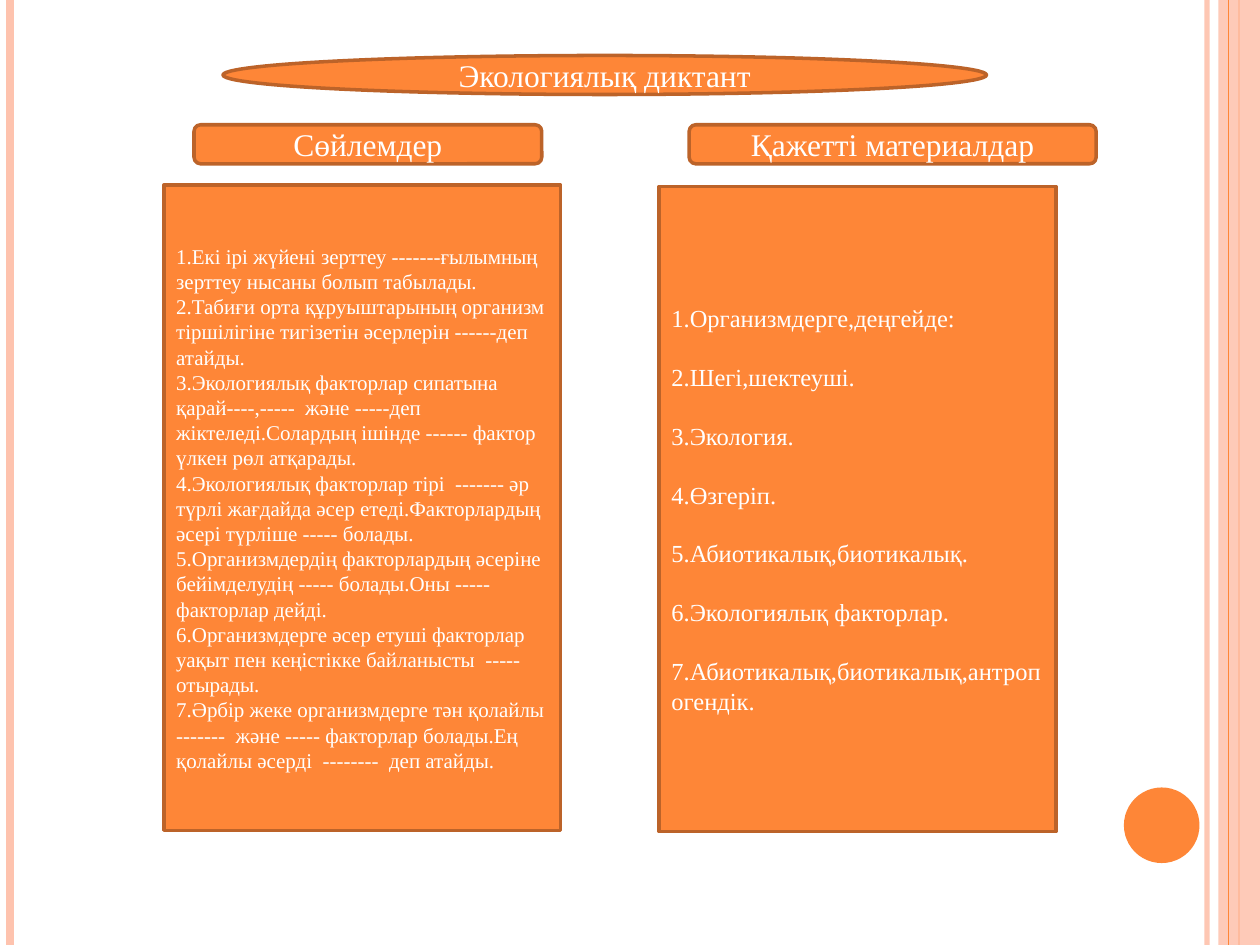
from dataclasses import dataclass

from lxml import etree
from pptx import Presentation
from pptx.dml.color import RGBColor
from pptx.enum.shapes import MSO_CONNECTOR, MSO_SHAPE
from pptx.enum.text import MSO_ANCHOR, PP_ALIGN
from pptx.oxml.ns import qn
from pptx.util import Inches, Pt

STRAIGHT = MSO_CONNECTOR.STRAIGHT
RECTANGLE, ROUNDED, ELLIPSE = MSO_SHAPE.RECTANGLE, MSO_SHAPE.ROUNDED_RECTANGLE, MSO_SHAPE.OVAL
LEFT, CENTER = PP_ALIGN.LEFT, PP_ALIGN.CENTER
MIDDLE = MSO_ANCHOR.MIDDLE
TOP_SITE, BOTTOM_SITE = 0, 2

CELL = Inches(0.1)
COLUMNS, ROWS = 100, 75


@dataclass(frozen=True)
class Theme:
    """Colours, font and sizes of the slide."""
    orange: str = "FE8637"
    peach: str = "FEC3AE"
    border: str = "BC6329"
    text: str = "FFFFFF"
    font: str = "Times New Roman"
    heading_size: float = 18
    sentence_size: float = 12
    material_size: float = 14
    material_gap: float = 16.8
    border_width: float = 2


THEME = Theme()

SENTENCES = [
    "1.Екі ірі жүйені зерттеу -------ғылымның зерттеу нысаны болып табылады.",
    "2.Табиғи орта құруыштарының организм тіршілігіне тигізетін әсерлерін ------деп атайды.",
    "3.Экологиялық факторлар сипатына қарай----,-----  және -----деп жіктеледі."
    "Солардың ішінде ------ фактор үлкен рөл атқарады.",
    "4.Экологиялық факторлар тірі  ------- әр түрлі жағдайда әсер етеді."
    "Факторлардың әсері түрліше ----- болады.",
    "5.Организмдердің факторлардың әсеріне бейімделудің ----- болады.Оны -----факторлар дейді.",
    "6.Организмдерге әсер етуші факторлар уақыт пен кеңістікке байланысты  -----отырады.",
    "7.Әрбір жеке организмдерге тән қолайлы -------  және ----- факторлар болады."
    "Ең қолайлы әсерді  --------  деп атайды.",
]
MATERIALS = [
    "1.Организмдерге,деңгейде:",
    "2.Шегі,шектеуші.",
    "3.Экология.",
    "4.Өзгеріп.",
    "5.Абиотикалық,биотикалық.",
    "6.Экологиялық факторлар.",
    "7.Абиотикалық,биотикалық,антропогендік.",
]


def cells(count):
    """Convert a number of grid cells to a length."""
    return round(count * CELL)


def set_opacity(properties, percent):
    """Make the solid colour inside a properties element partly transparent."""
    colour = next(properties.iter(qn("a:srgbClr")))
    etree.SubElement(colour, qn("a:alpha")).set("val", str(percent * 1000))


def add_shape(slide, kind, column, row, columns, rows, fill=THEME.orange, border=None):
    """Add a filled preset shape placed on the grid."""
    shape = slide.shapes.add_shape(kind, *map(cells, (column, row, columns, rows)))
    shape.shadow.inherit = False
    shape.fill.solid()
    shape.fill.fore_color.rgb = RGBColor.from_string(fill)
    if border:
        shape.line.color.rgb = RGBColor.from_string(border)
        shape.line.width = Pt(THEME.border_width)
    else:
        shape.line.fill.background()
    return shape


def add_stripe(slide, column, colour, width):
    """Add a vertical line over the full height of the slide."""
    x = cells(column)
    stripe = slide.shapes.add_connector(STRAIGHT, x, 0, x, cells(ROWS))
    stripe.line.color.rgb = RGBColor.from_string(colour)
    stripe.line.width = Pt(width)
    etree.SubElement(stripe._element.spPr, qn("a:effectLst"))
    return stripe


def add_text_shape(slide, kind, place, lines, size, alignment=LEFT, gap=0):
    """Add a bordered shape holding one paragraph for each line of text."""
    shape = add_shape(slide, kind, *place, border=THEME.border)
    frame = shape.text_frame
    frame.word_wrap = True
    frame.vertical_anchor = MIDDLE
    for index, line in enumerate(lines):
        paragraph = frame.add_paragraph() if index else frame.paragraphs[0]
        paragraph.alignment = alignment
        if index and gap:
            paragraph.space_before = Pt(gap)
        run = paragraph.add_run()
        run.text = line
        run.font.name = THEME.font
        run.font.size = Pt(size)
        run.font.color.rgb = RGBColor.from_string(THEME.text)


def add_heading(slide, kind, place, text):
    """Add a centred one-line heading shape."""
    add_text_shape(slide, kind, place, [text], THEME.heading_size, CENTER)


def add_frame(slide):
    """Add the edge stripes, the right band and the corner disc."""
    inner_stripe = add_stripe(slide, 95.8, THEME.peach, 3)
    set_opacity(inner_stripe._element.spPr, 93)
    add_stripe(slide, 0.8, THEME.peach, 4.5)
    band_stripe = add_stripe(slide, 98.3, THEME.orange, 1.5)
    band = add_shape(slide, RECTANGLE, 96.7, 0, COLUMNS - 96.7, ROWS, THEME.peach)
    set_opacity(band._element.spPr, 87)
    band_stripe.begin_connect(band, TOP_SITE)
    band_stripe.end_connect(band, BOTTOM_SITE)
    add_stripe(slide, 97.5, THEME.orange, 0.75)
    add_shape(slide, ELLIPSE, 89.2, 62.5, 6, 6)


def main():
    """Build and save the slide."""
    presentation = Presentation()
    presentation.slide_width, presentation.slide_height = cells(COLUMNS), cells(ROWS)
    slide = presentation.slides.add_slide(presentation.slide_layouts[6])
    add_frame(slide)
    add_heading(slide, ELLIPSE, (17.7, 4.4, 60.6, 3.1), "Экологиялық диктант")
    add_heading(slide, ROUNDED, (15.4, 9.9, 27.6, 3.1), "Сөйлемдер")
    add_heading(slide, ROUNDED, (54.7, 9.9, 32.3, 3.1), "Қажетті материалдар")
    add_text_shape(slide, RECTANGLE, (13, 14.7, 31.5, 51.2), SENTENCES, THEME.sentence_size)
    add_text_shape(slide, RECTANGLE, (52.3, 14.8, 31.5, 51.2), MATERIALS,
                   THEME.material_size, gap=THEME.material_gap)
    presentation.save("out.pptx")


if __name__ == "__main__":
    main()
